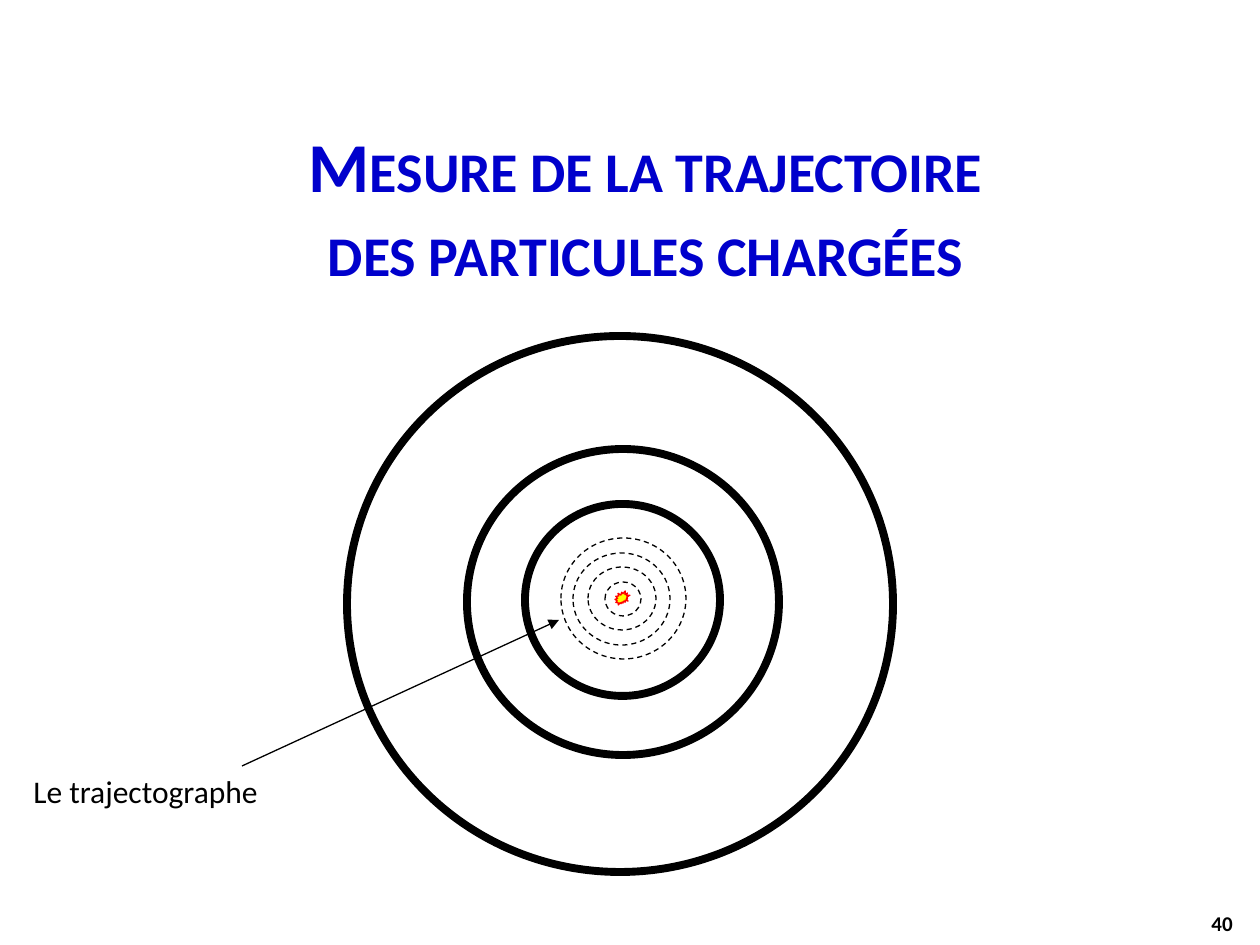
from dataclasses import dataclass

from lxml import etree
from pptx import Presentation
from pptx.dml.color import RGBColor
from pptx.enum.dml import MSO_LINE
from pptx.enum.shapes import MSO_CONNECTOR, MSO_SHAPE
from pptx.enum.text import MSO_ANCHOR, PP_ALIGN
from pptx.oxml.ns import qn
from pptx.util import Emu, Pt

PX = 914400 / 126
DASH = MSO_LINE.DASH
STRAIGHT = MSO_CONNECTOR.STRAIGHT
OVAL, BURST = MSO_SHAPE.OVAL, MSO_SHAPE.EXPLOSION2
TOP, MIDDLE = MSO_ANCHOR.TOP, MSO_ANCHOR.MIDDLE
LEFT, CENTER, RIGHT = PP_ALIGN.LEFT, PP_ALIGN.CENTER, PP_ALIGN.RIGHT


@dataclass(frozen=True)
class Theme:
    """Colours, type sizes and line widths of the slide."""
    font: str = "Calibri"
    ink: str = "000000"
    paper: str = "FFFFFF"
    title: str = "0000CC"
    spark: str = "FFFF00"
    spark_edge: str = "FF0000"
    title_size: int = 40
    label_size: int = 18
    number_size: int = 12
    thick: float = 4.5
    thin: float = 0.75


T = Theme()


def px(*values):
    """Turn pixel lengths into a list of EMU lengths."""
    return [Emu(round(v * PX)) for v in values]


def add_text(s, box, text, size, color=T.ink, bold=False, small_caps=False,
             align=LEFT, anchor=TOP, wrap=True):
    """Add a text box with one paragraph whose lines split at newlines."""
    tf = s.shapes.add_textbox(*px(*box)).text_frame
    tf.word_wrap = wrap
    tf.vertical_anchor = anchor
    p = tf.paragraphs[0]
    p.alignment = align
    for i, line in enumerate(text.split("\n")):
        if i:
            p.add_line_break()
        r = p.add_run()
        r.text = line
        r.font.name, r.font.size, r.font.bold = T.font, Pt(size), bold
        r.font.color.rgb = RGBColor.from_string(color)
        if small_caps:
            r.font._element.set("cap", "small")


def add_outline(shapes, kind, box, width, line=T.ink, fill=None, dash=None):
    """Add a preset shape with an outline and an optional fill."""
    sp = shapes.add_shape(kind, *px(*box))
    sp.shadow.inherit = False
    if fill:
        sp.fill.solid()
        sp.fill.fore_color.rgb = RGBColor.from_string(fill)
    else:
        sp.fill.background()
    sp.line.color.rgb = RGBColor.from_string(line)
    sp.line.width = Pt(width)
    if dash:
        sp.line.dash_style = dash


def add_arrow(s, start, end):
    """Add a thin line with a triangle at its end."""
    c = s.shapes.add_connector(STRAIGHT, *px(*start, *end))
    c.line.color.rgb = RGBColor.from_string(T.ink)
    c.line.width = Pt(T.thin)
    etree.SubElement(c.line._get_or_add_ln(), qn("a:tailEnd"), type="triangle")
    etree.SubElement(c._element.spPr, qn("a:effectLst"))


def add_detector(s, x, y):
    """Draw the three thick detector layers from the outside inwards."""
    layers = [(0, 0, 546, 536), (120, 113, 312, 306), (178, 168, 195, 192)]
    for dx, dy, w, h in layers:
        add_outline(s.shapes, OVAL, (x + dx, y + dy, w, h), T.thick, fill=T.paper)


def add_tracker(s, x, y):
    """Draw the collision point and its dashed tracking layers as a group."""
    shapes = s.shapes.add_group_shape().shapes
    add_outline(shapes, BURST, (x + 54, y + 53, 15, 14), T.thin,
                line=T.spark_edge, fill=T.spark)
    rings = [(44, 44, 36, 34), (27, 29, 68, 63), (12, 15, 97, 92), (0, 0, 125, 121)]
    for dx, dy, w, h in rings:
        add_outline(shapes, OVAL, (x + dx, y + dy, w, h), T.thin, dash=DASH)


def add_callout(s, x, y):
    """Place the tracker label and the arrow that leaves it."""
    add_arrow(s, (x + 221, y), (x + 538, y - 146))
    add_text(s, (x, y, 336, 54), "Le trajectographe", T.label_size, wrap=False)


def main():
    """Build the slide and save it."""
    prs = Presentation()
    prs.slide_width, prs.slide_height = px(1260, 945)
    s = prs.slides.add_slide(prs.slide_layouts[6])
    add_text(s, (147, 116, 997, 180),
             "Mesure de la trajectoire\ndes particules chargées", T.title_size,
             color=T.title, bold=True, small_caps=True, align=CENTER, anchor=MIDDLE)
    add_detector(s, 347, 336)
    add_callout(s, 21, 766)
    add_tracker(s, 561, 538)
    add_text(s, (951, 898, 294, 50), "40", T.number_size, bold=True,
             align=RIGHT, anchor=MIDDLE)
    prs.save("out.pptx")


if __name__ == "__main__":
    main()
